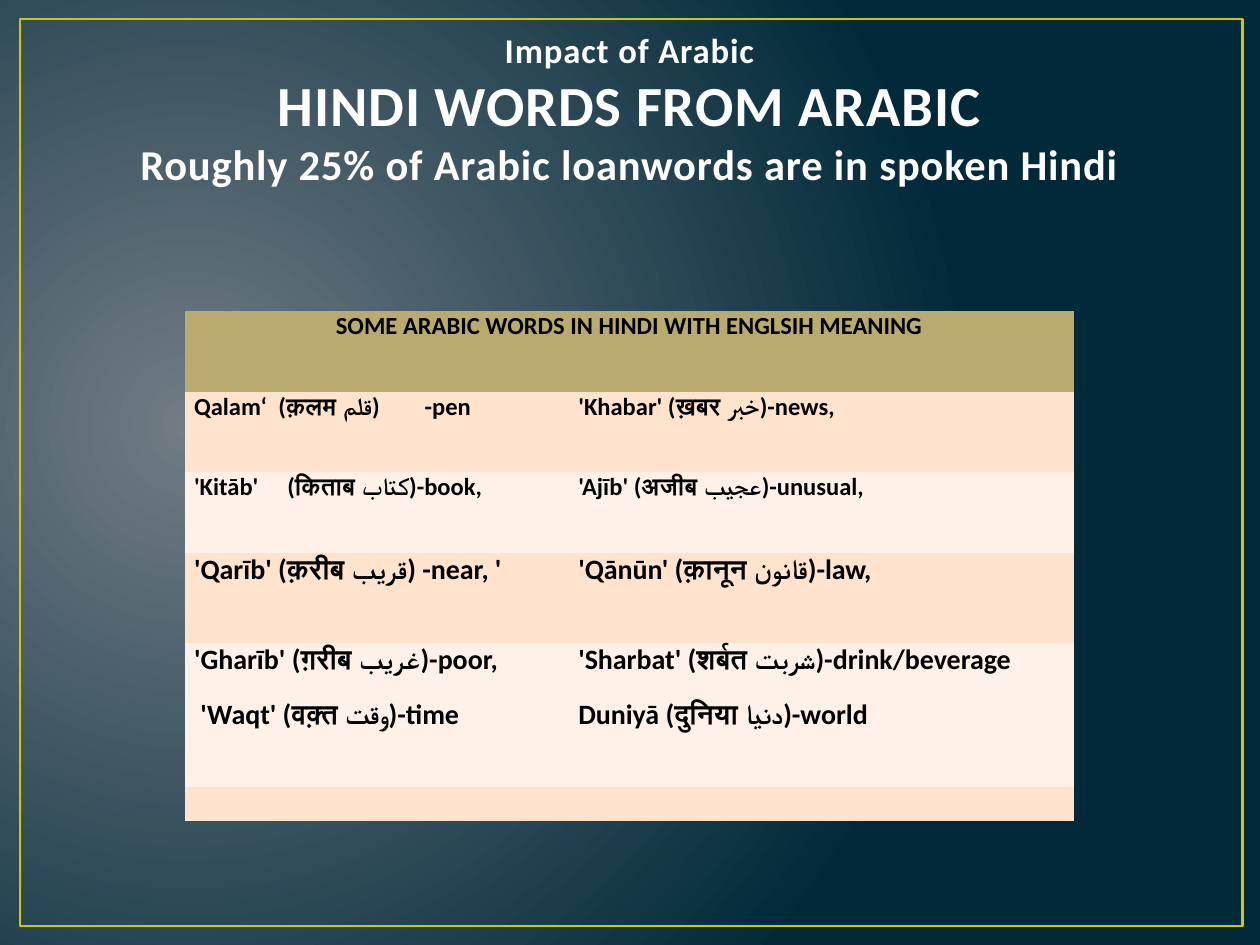
import pptx
import pptx.util
import pptx.dml.color
import pptx.enum.shapes
import pptx.enum.text
import pptx.oxml.ns
import lxml.etree

Inches = pptx.util.Inches
Pt = pptx.util.Pt
ALIGN = pptx.enum.text.PP_ALIGN
qn = pptx.oxml.ns.qn

COLORS = {
    "glow": "717C84", "deep": "01293A", "frame": "CFC60D", "title": "FEFEFE",
    "text": "000000", "head": "B9AB6F", "dark": "FFE3CD", "light": "FFF1E8",
}
PLAIN = "{2D5ABB26-0587-4C30-8999-92F81FD0307C}"


def rgb(name):
    return pptx.dml.color.RGBColor.from_string(COLORS[name])


class Deck:
    def __init__(self, wide, high):
        self.font = "Calibri"
        self.prs = pptx.Presentation()
        self.prs.slide_width, self.prs.slide_height = Inches(wide), Inches(high)
        self.slide = self.prs.slides.add_slide(self.prs.slide_layouts[6])

    def glow(self, left, top, right, base):
        """Radial background that starts from the given focus."""
        fill = self.slide.background.fill
        fill.gradient()
        for stop, name in zip(fill.gradient_stops, ("glow", "deep")):
            stop.color.rgb = rgb(name)
        grad = next(self.slide.element.iter(qn("a:gradFill")))
        line = grad.find(qn("a:lin"))
        if line is not None:
            grad.remove(line)
        ring = lxml.etree.Element(qn("a:path"), {"path": "circle"})
        focus = lxml.etree.SubElement(ring, qn("a:fillToRect"))
        for side, part in zip("ltrb", (left, top, right, base)):
            focus.set(side, str(part * 1000))
        grad.find(qn("a:gsLst")).addnext(ring)

    def frame(self, x, y, w, h):
        box = self.slide.shapes.add_shape(
            pptx.enum.shapes.MSO_SHAPE.RECTANGLE,
            Inches(x), Inches(y), Inches(w), Inches(h))
        box.shadow.inherit = False
        box.fill.background()
        box.line.color.rgb = rgb("frame")
        box.line.width = Pt(1.5)

    def run(self, para, text, size, color):
        run = para.add_run()
        run.text = text
        font = run.font
        font.name, font.size, font.bold = self.font, Pt(size), True
        font.color.rgb = rgb(color)
        return run

    def title(self, x, y, w, h, lines):
        box = self.slide.shapes.add_textbox(Inches(x), Inches(y), Inches(w), Inches(h))
        frame = box.text_frame
        frame.word_wrap = True
        frame.vertical_anchor = pptx.enum.text.MSO_ANCHOR.BOTTOM
        para = frame.paragraphs[0]
        para.alignment = ALIGN.CENTER
        for i, (text, size) in enumerate(lines):
            if i:
                para.add_line_break()
            run = self.run(para, text, size, "title")
            run.font._element.set("spc", "50")

    def table(self, x, y, cols, rows):
        shape = self.slide.shapes.add_table(
            len(rows), len(cols), Inches(x), Inches(y),
            Inches(sum(cols)), Inches(sum(rows)))
        grid = shape.table
        grid.first_row = grid.horz_banding = False
        next(shape._element.iter(qn("a:tableStyleId"))).text = PLAIN
        for col, wide in zip(grid.columns, cols):
            col.width = Inches(wide)
        for row, high in zip(grid.rows, rows):
            row.height = Inches(high)
        return grid

    def cell(self, cell, lines, size, fill, align=ALIGN.LEFT):
        cell.fill.solid()
        cell.fill.fore_color.rgb = rgb(fill)
        cell.margin_left = cell.margin_right = Inches(0.07)
        cell.margin_top = cell.margin_bottom = 0
        frame = cell.text_frame
        for i, (text, tabs, indent) in enumerate(lines):
            para = frame.add_paragraph() if i else frame.paragraphs[0]
            self.tabs(para, tabs, indent)
            para.alignment = align
            para.space_after = Pt(12)
            self.run(para, text, size, "text")
        if not lines:  # keep an empty row low
            end = lxml.etree.SubElement(frame.paragraphs[0]._p, qn("a:endParaRPr"))
            end.set("sz", str(size * 100))

    def tabs(self, para, tabs, indent):
        props = para._p.get_or_add_pPr()
        if indent:
            props.set("marL", str(Inches(indent)))
        if tabs:
            stops = lxml.etree.SubElement(props, qn("a:tabLst"))
            for pos in tabs:
                lxml.etree.SubElement(
                    stops, qn("a:tab"), {"pos": str(Inches(pos)), "algn": "l"})


def line(text, tabs=(), indent=0):
    return text, tabs, indent


def main():
    deck = Deck(10, 7.5)

    # Backdrop
    deck.glow(15, 50, 85, 60)
    deck.frame(0.16, 0.15, 9.7, 7.2)

    # Heading
    deck.title(0.5, 0.3, 9, 1.25, [
        ("Impact of Arabic", 19.8),
        ("HINDI WORDS FROM ARABIC", 32.4),
        ("Roughly 25% of Arabic loanwords are in spoken Hindi", 24.3),
    ])

    # Word list: text size, left cell, right cell
    words = [
        (14, [line("Qalam‘\t(क़लम قلم)\t-pen", (0.67, 1.83))],
         [line("'Khabar' (ख़बर خبر)-news,")]),
        (14, [line("'Kitāb'\t(किताब کتاب)-book,", (0.74,))],
         [line("'Ajīb' (अजीब عجیب)-unusual,")]),
        (16, [line("'Qarīb' (क़रीब قریب) -near, '")],
         [line("'Qānūn' (क़ानून قانون)-law,")]),
        (16, [line("'Gharīb' (ग़रीब غریب)-poor,"),
              line("'Waqt' (वक़्त وقت)-time", indent=0.05)],
         [line("'Sharbat' (शर्बत شربت)-drink/beverage"),
          line("Duniyā (दुनिया دنیا)-world")]),
        (14, [], []),
    ]
    grid = deck.table(1.47, 2.47, [3.05, 4], [0.64, 0.64, 0.64, 0.71, 1.15, 0.27])
    head = grid.cell(0, 0)
    head.merge(grid.cell(0, 1))
    deck.cell(head, [line("SOME ARABIC WORDS IN HINDI WITH ENGLSIH MEANING")],
              14, "head", ALIGN.CENTER)
    for r, (size, *pair) in enumerate(words, 1):
        for c, lines in enumerate(pair):
            deck.cell(grid.cell(r, c), lines, size, "dark" if r % 2 else "light")

    deck.prs.save("out.pptx")


if __name__ == "__main__":
    main()
